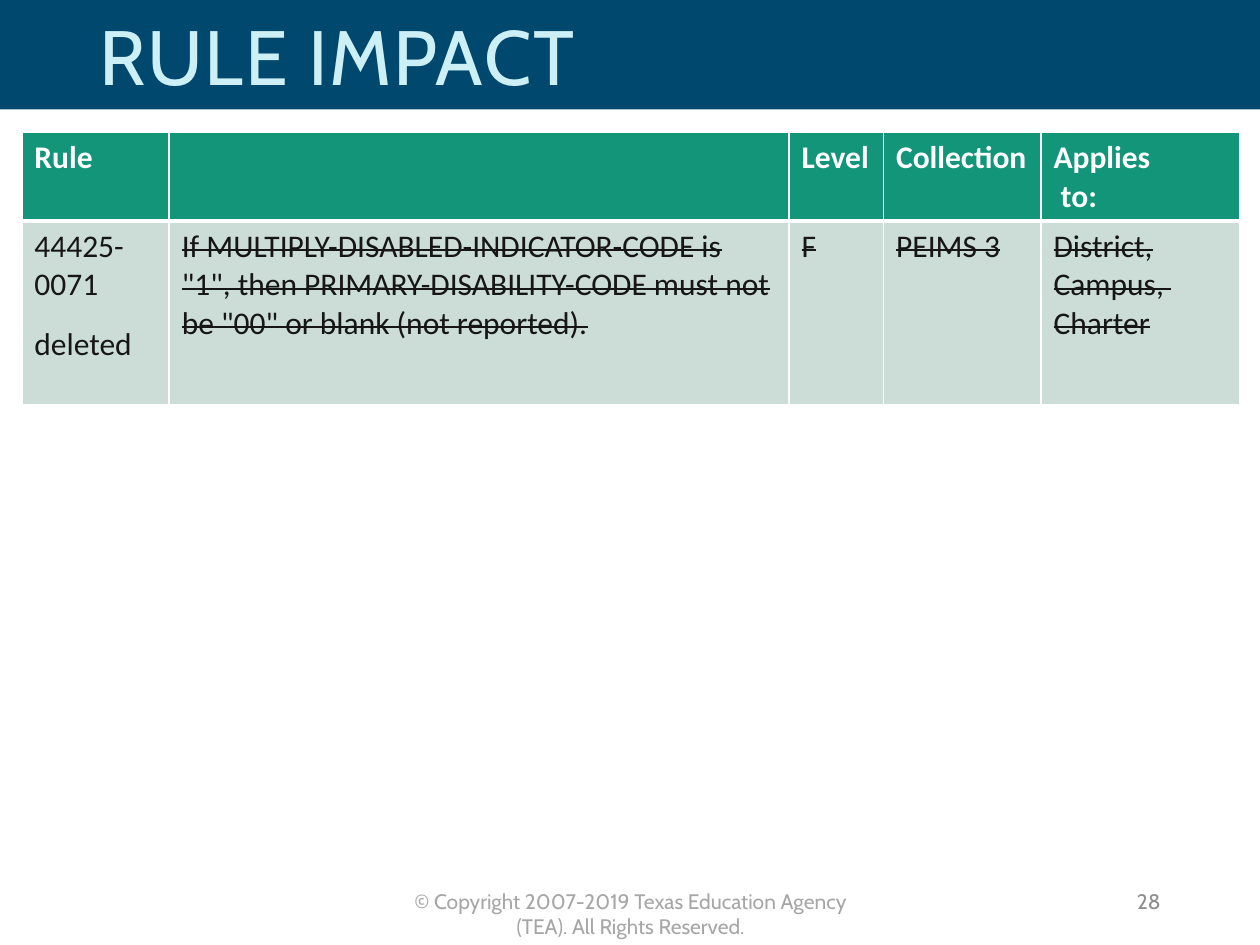
from lxml.etree import SubElement
from pptx import Presentation
from pptx.dml.color import RGBColor
from pptx.enum.shapes import MSO_SHAPE
from pptx.enum.text import MSO_ANCHOR, PP_ALIGN
from pptx.oxml.ns import qn
from pptx.util import Pt

WHITE, NAVY, GREEN, PALE, INK = "FFFFFF", "00486E", "129579", "CCDDD7", "171616"
COLUMNS = [84.2, 354.2, 54, 90, 113.8]
HEADER = [["Rule"], [], ["Level"], ["Collection"], ["Applies", " to:"]]
RULE = [
    ["44425-0071", "deleted"],
    ['If MULTIPLY-DISABLED-INDICATOR-CODE is "1", then '
     'PRIMARY-DISABILITY-CODE must not be "00" or blank (not reported).'],
    ["F"],
    ["PEIMS 3"],
    ["District, Campus, ", "Charter"],
]


def color(hex_value):
    return RGBColor.from_string(hex_value)


def set_all(obj, values):
    for name, value in values.items():
        setattr(obj, name, value)


def add_run(p, text, size, font, hex_value, bold=False, **xml_attrs):
    r = p.add_run()
    r.text = text
    set_all(r.font, {"size": Pt(size), "name": font, "bold": bold})
    r.font.color.rgb = color(hex_value)
    for name, value in xml_attrs.items():
        r._r.get_or_add_rPr().set(name, value)


def add_bar(s, left, top, width, height, fill):
    sp = s.shapes.add_shape(MSO_SHAPE.RECTANGLE, Pt(left), Pt(top), Pt(width), Pt(height))
    sp.shadow.inherit = False
    sp.fill.solid()
    sp.fill.fore_color.rgb = color(fill)
    sp.line.fill.background()


def add_text(s, box, text, size, hex_value, frame=None, para=None, **xml_attrs):
    sp = s.shapes.add_textbox(*map(Pt, box))
    tf = sp.text_frame
    set_all(tf, {"word_wrap": True, **(frame or {})})
    p = tf.paragraphs[0]
    set_all(p, para or {})
    add_run(p, text, size, "Cabin", hex_value, **xml_attrs)


def style_cell(cell, fill, bottom_width):
    cell.fill.solid()
    cell.fill.fore_color.rgb = color(fill)
    tcPr = cell._tc.get_or_add_tcPr()
    # Borders come before the fill in the cell properties
    for i, (side, width) in enumerate([("L", 1), ("R", 1), ("T", 1), ("B", bottom_width)]):
        ln = SubElement(tcPr, qn("a:ln" + side), w=str(Pt(width)))
        SubElement(SubElement(ln, qn("a:solidFill")), qn("a:srgbClr"), val=WHITE)
        tcPr.insert(i, ln)


def fill_cell(cell, lines, hex_value, bold, gap, join=False, **xml_attrs):
    tf = cell.text_frame
    for i, text in enumerate(lines):
        p = tf.paragraphs[0] if i == 0 else tf.add_paragraph()
        spaced = gap and not (join and i == 0)
        p.space_after = Pt(gap if spaced else 0)
        if i:
            p.space_before = Pt(0 if join else gap)
        add_run(p, text, 18, "Calibri", hex_value, bold, **xml_attrs)


def add_rule_table(s):
    frame = s.shapes.add_table(2, len(COLUMNS), Pt(12.5), Pt(75.8), Pt(sum(COLUMNS)), Pt(155.6))
    table = frame.table
    for column, width in zip(table.columns, COLUMNS):
        column.width = Pt(width)
    for row, height in zip(table.rows, [50.4, 105.2]):
        row.height = Pt(height)
    for c, (head, body) in enumerate(zip(HEADER, RULE)):
        top, bottom = table.cell(0, c), table.cell(1, c)
        style_cell(top, GREEN, 3)
        fill_cell(top, head, WHITE, True, 0)
        style_cell(bottom, PALE, 1)
        # The deleted rule is struck out, except for its number
        strike = {"strike": "sngStrike"} if c else {}
        fill_cell(bottom, body, INK, False, 6, join=c > 0, **strike)


def main():
    prs = Presentation()
    set_all(prs, {"slide_width": Pt(720), "slide_height": Pt(540)})
    s = prs.slides.add_slide(prs.slide_layouts[6])

    # Title band
    add_bar(s, 0, 0, 720, 62.6, NAVY)
    add_text(s, (49.7, 3.6, 576, 62.6), "RULE IMPACT", 44, "CCF0F5",
             {"vertical_anchor": MSO_ANCHOR.MIDDLE}, {"line_spacing": 0.9}, spc="100")

    # Rule table
    add_rule_table(s)

    # Footer and page number
    add_text(s, (218.9, 504, 283, 21.6),
             "© Copyright 2007-2019 Texas Education Agency (TEA). All Rights Reserved.",
             12, "A6A6A6", para={"alignment": PP_ALIGN.CENTER})
    add_text(s, (508.3, 500.4, 162, 28.8), "28", 12, "8C8C8C",
             {"vertical_anchor": MSO_ANCHOR.MIDDLE}, {"alignment": PP_ALIGN.RIGHT})

    prs.save("out.pptx")


if __name__ == "__main__":
    main()
